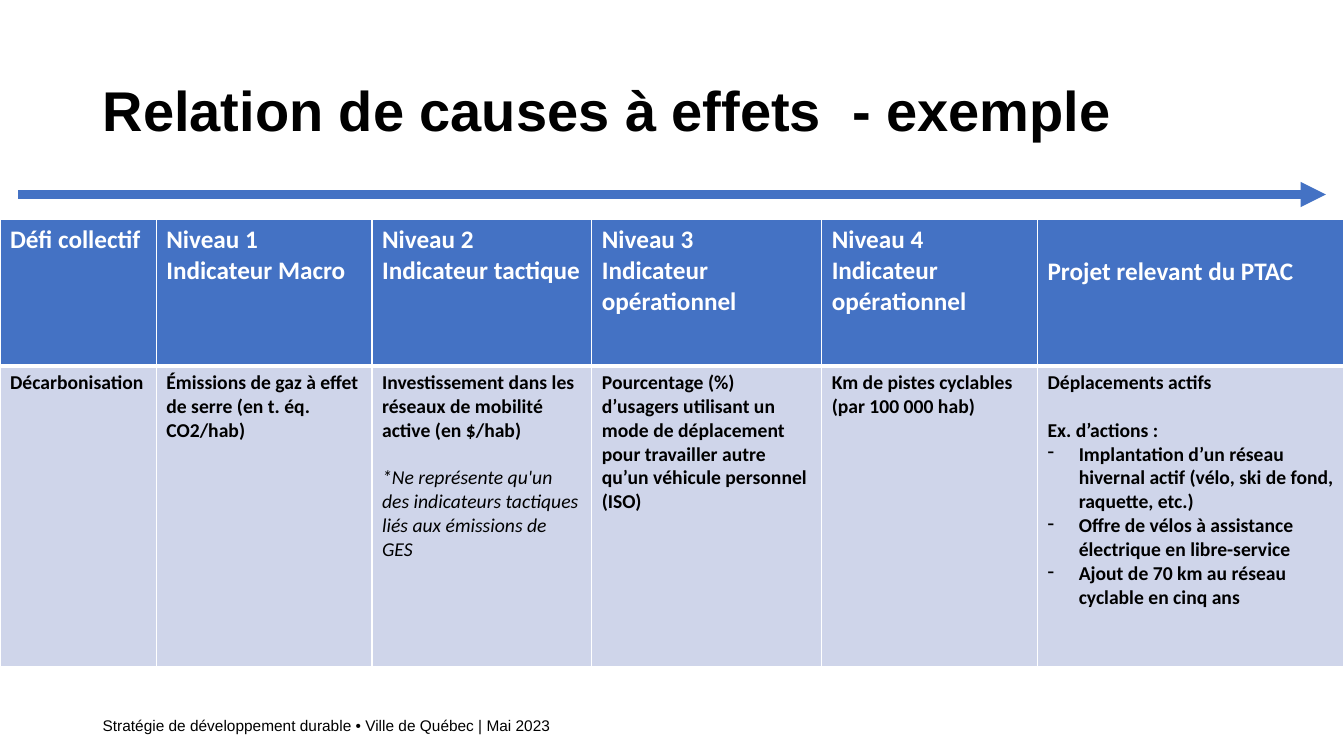
from dataclasses import dataclass

from lxml import etree
from pptx import Presentation
from pptx.dml.color import RGBColor
from pptx.enum.shapes import MSO_CONNECTOR
from pptx.enum.text import MSO_ANCHOR
from pptx.oxml.ns import qn
from pptx.slide import Slide
from pptx.table import _Cell
from pptx.text.text import TextFrame, _Paragraph
from pptx.util import Pt

STRAIGHT = MSO_CONNECTOR.STRAIGHT
MIDDLE = MSO_ANCHOR.MIDDLE
EMU_PER_PX = 9144
BLUE, PALE, WHITE, BLACK = "4472C4", "CFD5EA", "FFFFFF", "000000"
COLUMN_WIDTHS = (155, 214, 218, 228, 214, 304)
ROW_HEIGHTS = (145, 298)
INDENT = 31
BODY_GAP = 17


@dataclass(frozen=True)
class Line:
    text: str
    italic: bool = False
    bullet: bool = False
    gap: int = 0


@dataclass(frozen=True)
class TextBox:
    text: str
    left: int
    top: int
    width: int
    height: int
    size: int
    bold: bool = False
    baseline: int = 0
    line_spacing: float = 1.0


@dataclass(frozen=True)
class Column:
    heading: tuple[str, ...]
    lines: tuple[Line, ...]
    heading_top: int = 5


@dataclass(frozen=True)
class RowStyle:
    fill: str
    color: str
    size: int
    borders: dict[str, int]


ROW_STYLES = (
    RowStyle(BLUE, WHITE, 18, {"lnL": 1, "lnR": 1, "lnT": 1, "lnB": 3}),
    RowStyle(PALE, BLACK, 14, {"lnL": 1, "lnR": 1, "lnT": 3, "lnB": 1}),
)

TEXT_BOXES = (
    TextBox("Relation de causes à effets  - exemple", 92, 40, 1181, 145, 40,
            bold=True, line_spacing=0.9),
    TextBox("Stratégie de développement durable • Ville de Québec | Mai 2023",
            92, 703, 616, 40, 19, baseline=30000),
)

COLUMNS = (
    Column(("Défi collectif",), (Line("Décarbonisation"),)),
    Column(("Niveau 1", "Indicateur Macro"),
           (Line("Émissions de gaz à effet de serre (en t. éq. CO2/hab)"),)),
    Column(("Niveau 2", "Indicateur tactique"), (
        Line("Investissement dans les réseaux de mobilité active (en $/hab)"),
        Line("*Ne représente qu'un des indicateurs tactiques liés aux émissions de GES",
             italic=True, gap=BODY_GAP),
    )),
    Column(("Niveau 3", "Indicateur opérationnel"), (
        Line("Pourcentage (%) d’usagers utilisant un mode de déplacement pour "
             "travailler autre qu’un véhicule personnel (ISO)"),
    )),
    Column(("Niveau 4", "Indicateur opérationnel"),
           (Line("Km de pistes cyclables"), Line("(par 100 000 hab)"))),
    Column(("Projet relevant du PTAC",), (
        Line("Déplacements actifs"),
        Line("Ex. d’actions :", gap=BODY_GAP),
        Line("Implantation d’un réseau hivernal actif (vélo, ski de fond, raquette, etc.)",
             bullet=True),
        Line("Offre de vélos à assistance électrique en libre-service", bullet=True),
        Line("Ajout de 70 km au réseau cyclable en cinq ans", bullet=True),
    ), heading_top=36),
)


def px(value: int) -> int:
    """Turn px into EMU."""
    return value * EMU_PER_PX


def rgb(value: str) -> RGBColor:
    """Turn a hex string into a colour."""
    return RGBColor.from_string(value)


def next_paragraph(frame: TextFrame, index: int) -> _Paragraph:
    """Return the first paragraph of a frame or add another."""
    return frame.paragraphs[0] if index == 0 else frame.add_paragraph()


def add_run(paragraph: _Paragraph, text: str, color: str, formats: dict, baseline: int = 0) -> None:
    """Add one formatted run of text."""
    run = paragraph.add_run()
    run.text = text
    for name, value in formats.items():
        setattr(run.font, name, value)
    run.font.color.rgb = rgb(color)
    if baseline:
        run.font._element.set("baseline", str(baseline))


def add_bullet(paragraph: _Paragraph) -> None:
    """Give a paragraph a hanging dash."""
    properties = paragraph._p.get_or_add_pPr()
    properties.set("marL", str(px(INDENT)))
    properties.set("indent", str(-px(INDENT)))
    etree.SubElement(properties, qn("a:buChar"), char="-")


def add_text_box(slide: Slide, box: TextBox) -> None:
    """Draw a single-paragraph text box."""
    shape = slide.shapes.add_textbox(px(box.left), px(box.top), px(box.width), px(box.height))
    frame = shape.text_frame
    frame.word_wrap = True
    frame.vertical_anchor = MIDDLE
    paragraph = frame.paragraphs[0]
    paragraph.line_spacing = box.line_spacing
    formats = {"name": "Arial", "size": Pt(box.size), "bold": box.bold}
    add_run(paragraph, box.text, BLACK, formats, box.baseline)


def fill_cell(cell: _Cell, lines: tuple[Line, ...], style: RowStyle) -> None:
    """Set the borders, fill and text of a cell."""
    properties = cell._tc.get_or_add_tcPr()
    for tag, width in style.borders.items():
        border = etree.SubElement(properties, qn(f"a:{tag}"), w=str(Pt(width)))
        solid = etree.SubElement(border, qn("a:solidFill"))
        etree.SubElement(solid, qn("a:srgbClr"), val=WHITE)
    cell.fill.solid()
    cell.fill.fore_color.rgb = rgb(style.fill)
    for index, line in enumerate(lines):
        paragraph = next_paragraph(cell.text_frame, index)
        if line.bullet:
            add_bullet(paragraph)
        if line.gap:
            paragraph.space_before = Pt(line.gap)
        formats = {"name": "Calibri", "size": Pt(style.size),
                   "bold": not line.italic, "italic": line.italic}
        add_run(paragraph, line.text, style.color, formats)


def add_indicator_table(slide: Slide) -> None:
    """Draw the table of indicator levels."""
    table = slide.shapes.add_table(
        len(ROW_HEIGHTS), len(COLUMNS), 0, px(218),
        px(sum(COLUMN_WIDTHS)), px(sum(ROW_HEIGHTS))).table
    for row, height in zip(table.rows, ROW_HEIGHTS):
        row.height = px(height)
    for index, (column, width) in enumerate(zip(COLUMNS, COLUMN_WIDTHS)):
        table.columns[index].width = px(width)
        heading = tuple(Line(text) for text in column.heading)
        for row_index, lines in enumerate((heading, column.lines)):
            fill_cell(table.cell(row_index, index), lines, ROW_STYLES[row_index])
        table.cell(0, index).margin_top = px(column.heading_top)


def add_arrow(slide: Slide) -> None:
    """Draw the arrow from cause to effect."""
    arrow = slide.shapes.add_connector(STRAIGHT, px(18), px(193), px(1315), px(193))
    arrow.line.color.rgb = rgb(BLUE)
    arrow.line.width = Pt(6)
    etree.SubElement(arrow.line._get_or_add_ln(), qn("a:tailEnd"), type="triangle")
    etree.SubElement(arrow._element.spPr, qn("a:effectLst"))


def main() -> None:
    """Build and save the slide."""
    presentation = Presentation()
    presentation.slide_width = px(1333)
    presentation.slide_height = px(750)
    slide = presentation.slides.add_slide(presentation.slide_layouts[6])
    for box in TEXT_BOXES:
        add_text_box(slide, box)
    add_indicator_table(slide)
    add_arrow(slide)
    presentation.save("out.pptx")


if __name__ == "__main__":
    main()
